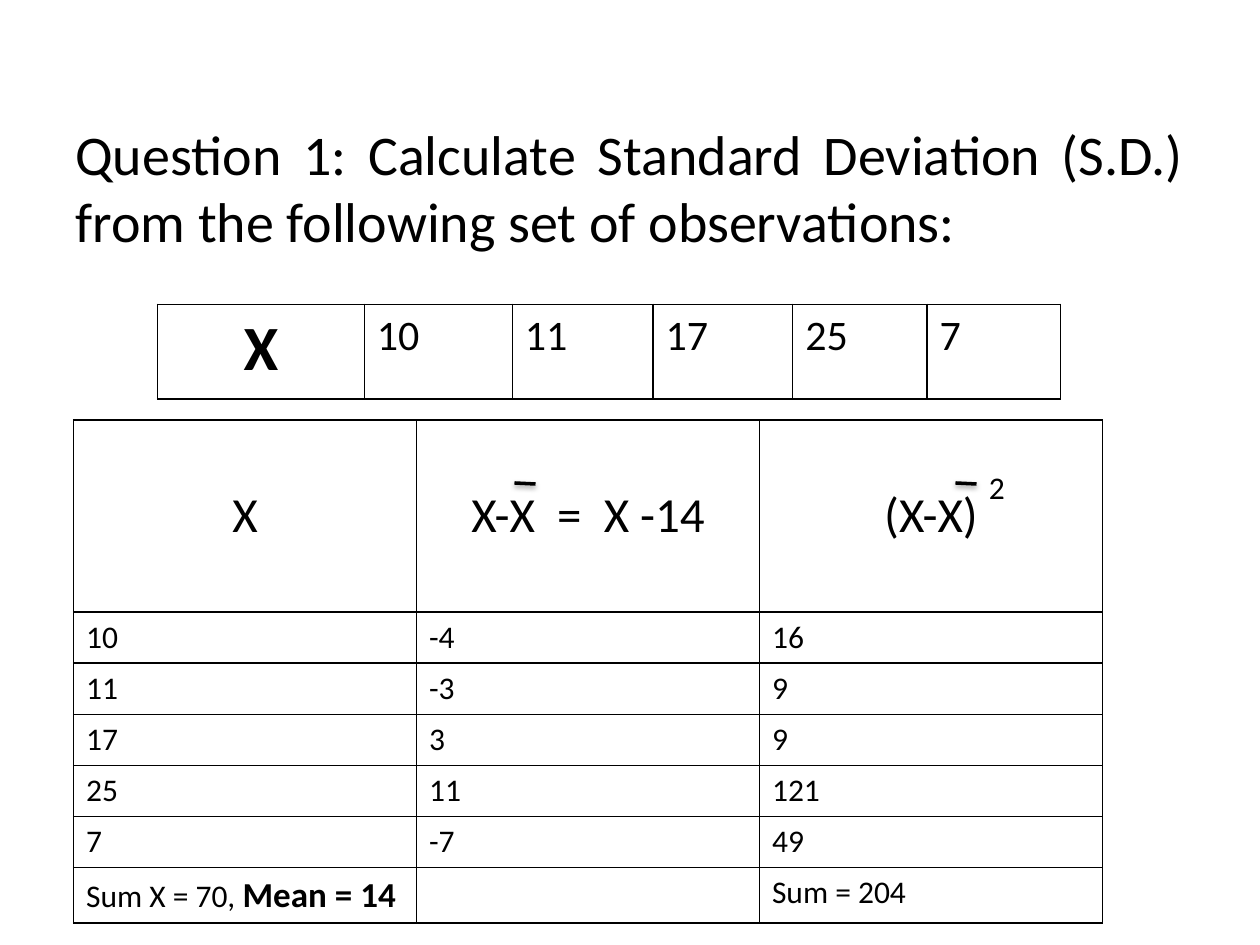
"""Build the standard deviation exercise slide on a grid of 120 columns by 90 rows."""
from dataclasses import dataclass

from lxml.etree import SubElement
from pptx import Presentation
from pptx.dml.color import RGBColor as Rgb
from pptx.enum.shapes import MSO_CONNECTOR as Link
from pptx.enum.text import MSO_ANCHOR as Anchor, PP_ALIGN as Align
from pptx.oxml.ns import qn
from pptx.util import Inches, Length, Pt


@dataclass(frozen=True)
class Theme:
    font: str = "Calibri"
    ink: str = "000000"
    title: int = 32
    label: int = 36
    value: int = 24
    head: int = 28
    body: int = 18
    mean: int = 20
    rule: int = 1
    bar: int = 2


@dataclass(frozen=True)
class Run:
    text: str
    size: int
    bold: bool = False


@dataclass(frozen=True)
class Cell:
    runs: tuple[Run, ...] = ()
    align: Align = Align.LEFT
    anchor: Anchor = Anchor.TOP


@dataclass(frozen=True)
class Box:
    left: float
    top: float
    width: float
    height: float
    run: Run
    align: Align = Align.LEFT
    wrap: bool = True


@dataclass(frozen=True)
class Grid:
    left: float
    top: float
    cols: tuple[float, ...]
    rows: tuple[float, ...]
    cells: list[list[Cell]]


@dataclass(frozen=True)
class Bar:
    left: float
    top: float
    width: float = 2
    drop: float = 0.1


THEME = Theme()
WIDE, HIGH = Inches(10), Inches(7.5)


def col(count: float) -> Length:
    """Return the length of a number of grid columns."""
    return Length(round(WIDE * count / 120))


def row(count: float) -> Length:
    """Return the length of a number of grid rows."""
    return Length(round(HIGH * count / 90))


def add_runs(para, runs: tuple[Run, ...]) -> None:
    """Add styled runs to a paragraph."""
    for item in runs:
        run = para.add_run()
        run.text = item.text
        font = run.font
        font.name, font.size, font.bold = THEME.font, Pt(item.size), item.bold
        font.color.rgb = Rgb.from_string(THEME.ink)


def draw_box(slide, box: Box) -> None:
    """Draw a text box."""
    shape = slide.shapes.add_textbox(
        col(box.left), row(box.top), col(box.width), row(box.height))
    shape.text_frame.word_wrap = box.wrap
    para = shape.text_frame.paragraphs[0]
    para.alignment = box.align
    add_runs(para, (box.run,))


def add_edges(cell) -> None:
    """Give a table cell a solid line on all four sides."""
    props = cell._tc.get_or_add_tcPr()
    for spot, side in enumerate(("lnL", "lnR", "lnT", "lnB")):
        line = SubElement(props, qn(f"a:{side}"), w=str(Pt(THEME.rule)))
        fill = SubElement(line, qn("a:solidFill"))
        SubElement(fill, qn("a:srgbClr"), val=THEME.ink)
        props.insert(spot, line)


def draw_grid(slide, grid: Grid) -> None:
    """Draw a table with ruled, unfilled cells."""
    table = slide.shapes.add_table(
        len(grid.rows), len(grid.cols), col(grid.left), row(grid.top),
        col(sum(grid.cols)), row(sum(grid.rows))).table
    table.first_row = table.horz_banding = False
    for part, width in zip(table.columns, grid.cols):
        part.width = col(width)
    for part, height, line in zip(table.rows, grid.rows, grid.cells):
        part.height = row(height)
        for cell, item in zip(part.cells, line):
            cell.fill.background()
            cell.vertical_anchor = item.anchor
            add_edges(cell)
            para = cell.text_frame.paragraphs[0]
            para.alignment = item.align
            para.font.size = Pt(THEME.body)
            add_runs(para, item.runs)


def draw_bar(slide, bar: Bar) -> None:
    """Draw a mean bar with a soft shadow."""
    line = slide.shapes.add_connector(
        Link.STRAIGHT, col(bar.left), row(bar.top),
        col(bar.left + bar.width), row(bar.top + bar.drop))
    line.line.width = Pt(THEME.bar)
    line.line.color.rgb = Rgb.from_string(THEME.ink)
    effects = SubElement(line._element.spPr, qn("a:effectLst"))
    shade = SubElement(effects, qn("a:outerShdw"), blurRad=str(Pt(3.1)),
                       dist=str(Pt(1.6)), dir="5400000", rotWithShape="0")
    tint = SubElement(shade, qn("a:srgbClr"), val=THEME.ink)
    SubElement(tint, qn("a:alpha"), val="38000")


def plain(text: str, size: int = THEME.body) -> Cell:
    """Return a left-aligned cell."""
    return Cell((Run(text, size),))


def head(text: str) -> Cell:
    """Return a centred heading cell."""
    return Cell((Run(text, THEME.head),), Align.CENTER, Anchor.MIDDLE)


def main() -> None:
    """Build and save the slide."""
    deck = Presentation()
    deck.slide_width, deck.slide_height = WIDE, HIGH
    slide = deck.slides.add_slide(deck.slide_layouts[6])

    title = Run("Question 1: Calculate Standard Deviation (S.D.) "
                "from the following set of observations:", THEME.title)
    draw_box(slide, Box(6, 10.8, 108, 14.4, title, Align.JUSTIFY))

    data = [("10", "-4", "16"), ("11", "-3", "9"), ("17", "3", "9"),
            ("25", "11", "121"), ("7", "-7", "49")]
    label = Cell((Run("X", THEME.label, True),), Align.CENTER)
    values = [plain(line[0], THEME.value) for line in data]
    draw_grid(slide, Grid(15, 29, (19.7, 14.1, 13.4, 13.3, 12.8, 12.7), (9,),
                          [[label, *values]]))

    heads = [head(text) for text in ("X", "X-X  =  X -14", "(X-X)")]
    body = [[plain(text) for text in line] for line in data]
    total = Cell((Run("Sum X = 70, ", THEME.body),
                  Run("Mean = 14", THEME.mean, True)))
    sums = [total, Cell(), plain("Sum = 204")]
    draw_grid(slide, Grid(7, 40, (98 / 3,) * 3,
                          (18.3, *(4.87,) * len(data), 5.3),
                          [heads, *body, sums]))

    for left in (49, 91):
        draw_bar(slide, Bar(left, 46))
    draw_box(slide, Box(93, 44, 4, 4.8, Run("2", THEME.body), wrap=False))
    deck.save("out.pptx")


if __name__ == "__main__":
    main()
